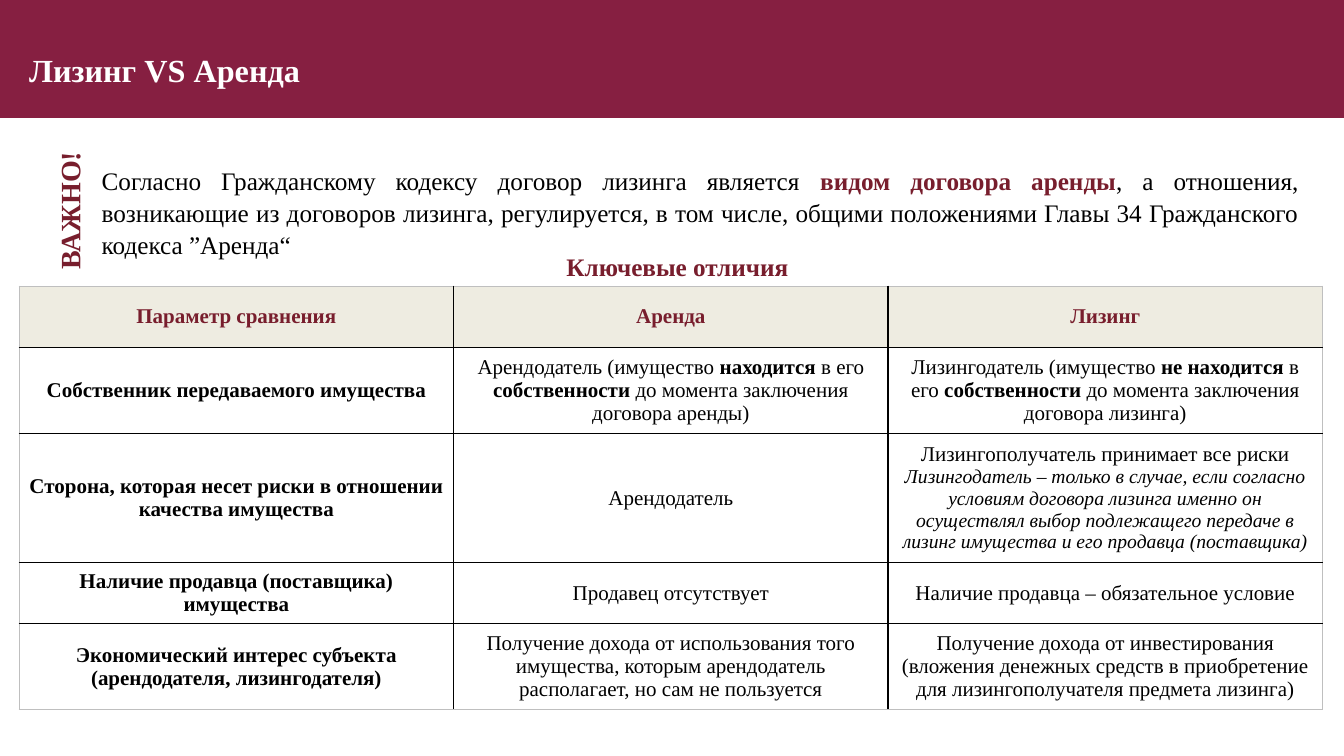
from dataclasses import dataclass

from lxml import etree
from pptx import Presentation
from pptx.dml.color import RGBColor
from pptx.enum.shapes import MSO_SHAPE
from pptx.enum.text import MSO_ANCHOR, PP_ALIGN
from pptx.oxml.ns import qn
from pptx.util import Inches, Pt

LEFT, CENTER, JUSTIFY = PP_ALIGN.LEFT, PP_ALIGN.CENTER, PP_ALIGN.JUSTIFY
TOP, MIDDLE = MSO_ANCHOR.TOP, MSO_ANCHOR.MIDDLE
RECTANGLE = MSO_SHAPE.RECTANGLE

FONT = "Times New Roman"
BURGUNDY = RGBColor(0x86, 0x1F, 0x41)
WINE = RGBColor(0x78, 0x1E, 0x2D)
CREAM = RGBColor(0xEE, 0xEC, 0xE1)
BLACK = RGBColor(0x00, 0x00, 0x00)
WHITE = RGBColor(0xFF, 0xFF, 0xFF)
GREY = RGBColor(0xBF, 0xBF, 0xBF)

SLIDE_W, SLIDE_H = Inches(13.33), Inches(7.5)


@dataclass
class Area:
    """A rectangle in percent of the slide's width and height."""
    left: float
    top: float
    width: float
    height: float

    def emu(self) -> tuple[int, int, int, int]:
        return (across(self.left), down(self.top),
                across(self.width), down(self.height))


@dataclass
class Style:
    size: float
    color: RGBColor = BLACK
    strong: RGBColor = BLACK
    italic: bool = False
    align: PP_ALIGN = CENTER
    spacing: float = 1.0


@dataclass
class Label:
    area: Area
    text: str
    style: Style
    anchor: MSO_ANCHOR = TOP
    rotation: int = 0


HEADER_BAR = Area(0, 0, 100, 15.6)

# Text between asterisks is bold and takes the strong colour of its style.
LABELS = [
    Label(Area(1.43, 5.33, 82.28, 7.73), "*Лизинг VS Аренда*",
          Style(23, strong=WHITE, align=LEFT), MIDDLE),
    Label(Area(6.83, 21.07, 90.53, 13.47),
          "Согласно Гражданскому кодексу договор лизинга является "
          "*видом договора аренды*, а отношения, возникающие из договоров "
          "лизинга, регулируется, в том числе, общими положениями Главы 34 "
          "Гражданского кодекса ”Аренда“",
          Style(18, strong=WINE, align=JUSTIFY, spacing=1.05)),
    Label(Area(-0.15, 24.93, 10.65, 5.87), "*ВАЖНО!*",
          Style(20, strong=WINE), rotation=270),
    Label(Area(3.53, 32.53, 93.75, 6.13), "*Ключевые отличия*",
          Style(18, strong=WINE)),
]

TABLE_AREA = Area(1.43, 37.87, 96.97, 55.97)
ROW_HEIGHTS = [8.07, 11.38, 17.07, 8.07, 11.38]
HEAD_STYLE = Style(15, strong=WINE)
CELL_STYLE = Style(15)
NOTE_STYLE = Style(14, italic=True)
COMPARISON = [
    ["*Параметр сравнения*", "*Аренда*", "*Лизинг*"],
    ["*Собственник передаваемого имущества*",
     "Арендодатель (имущество *находится* в его *собственности* до момента "
     "заключения договора аренды)",
     "Лизингодатель (имущество *не находится *в его *собственности* до "
     "момента заключения договора лизинга)"],
    ["*Сторона, которая несет риски в отношении качества имущества*",
     "Арендодатель",
     "Лизингополучатель принимает все риски\n"
     "Лизингодатель – только в случае, если согласно условиям договора "
     "лизинга именно он осуществлял выбор подлежащего передаче в лизинг "
     "имущества и его продавца (поставщика)"],
    ["*Наличие продавца (поставщика) имущества*",
     "Продавец отсутствует",
     "Наличие продавца – обязательное условие"],
    ["*Экономический интерес субъекта (арендодателя, лизингодателя)*",
     "Получение дохода от использования того имущества, которым "
     "арендодатель располагает, но сам не пользуется",
     "Получение дохода от инвестирования (вложения денежных средств в "
     "приобретение для лизингополучателя предмета лизинга)"],
]


def across(percent: float) -> int:
    return round(SLIDE_W * percent / 100)


def down(percent: float) -> int:
    return round(SLIDE_H * percent / 100)


def write(p, text: str, style: Style) -> None:
    p.alignment = style.align
    p.line_spacing = style.spacing
    for i, part in enumerate(text.split("*")):
        if not part:
            continue
        bold = i % 2 == 1
        r = p.add_run()
        r.text = part
        r.font.name = FONT
        r.font.size = Pt(style.size)
        r.font.bold = bold
        r.font.italic = style.italic
        r.font.color.rgb = style.strong if bold else style.color


def add_header_bar(slide) -> None:
    s = slide.shapes.add_shape(RECTANGLE, *HEADER_BAR.emu())
    s.shadow.inherit = False
    s.fill.solid()
    s.fill.fore_color.rgb = BURGUNDY
    s.line.fill.background()


def add_label(slide, label: Label) -> None:
    s = slide.shapes.add_textbox(*label.area.emu())
    s.rotation = label.rotation
    tf = s.text_frame
    tf.word_wrap = True
    tf.vertical_anchor = label.anchor
    write(tf.paragraphs[0], label.text, label.style)


def set_borders(cell, outer: dict[str, bool]) -> None:
    """Draw grey lines on the table's outer sides and black ones inside."""
    tc_pr = cell._tc.get_or_add_tcPr()
    for i, (side, is_outer) in enumerate(outer.items()):
        ln = etree.Element(qn(f"a:ln{side}"), w=str(Pt(1)))
        fill = etree.SubElement(ln, qn("a:solidFill"))
        color = GREY if is_outer else BLACK
        etree.SubElement(fill, qn("a:srgbClr"), val=str(color))
        tc_pr.insert(i, ln)


def add_comparison(slide) -> None:
    rows, cols = len(COMPARISON), len(COMPARISON[0])
    table = slide.shapes.add_table(rows, cols, *TABLE_AREA.emu()).table
    table.first_row = table.horz_banding = False
    for column in table.columns:
        column.width = across(TABLE_AREA.width / cols)
    for y, texts in enumerate(COMPARISON):
        table.rows[y].height = down(ROW_HEIGHTS[y])
        for x, text in enumerate(texts):
            cell = table.cell(y, x)
            cell.vertical_anchor = MIDDLE
            if y == 0:
                cell.fill.solid()
                cell.fill.fore_color.rgb = CREAM
            else:
                cell.fill.background()
            set_borders(cell, {"L": x == 0, "R": x == cols - 1,
                               "T": y == 0, "B": y == rows - 1})
            tf = cell.text_frame
            main, *notes = text.split("\n")
            write(tf.paragraphs[0], main, CELL_STYLE if y else HEAD_STYLE)
            for note in notes:
                write(tf.add_paragraph(), note, NOTE_STYLE)


def main() -> None:
    prs = Presentation()
    prs.slide_width, prs.slide_height = SLIDE_W, SLIDE_H
    slide = prs.slides.add_slide(prs.slide_layouts[6])
    add_header_bar(slide)
    for label in LABELS:
        add_label(slide, label)
    add_comparison(slide)
    prs.save("out.pptx")


if __name__ == "__main__":
    main()
